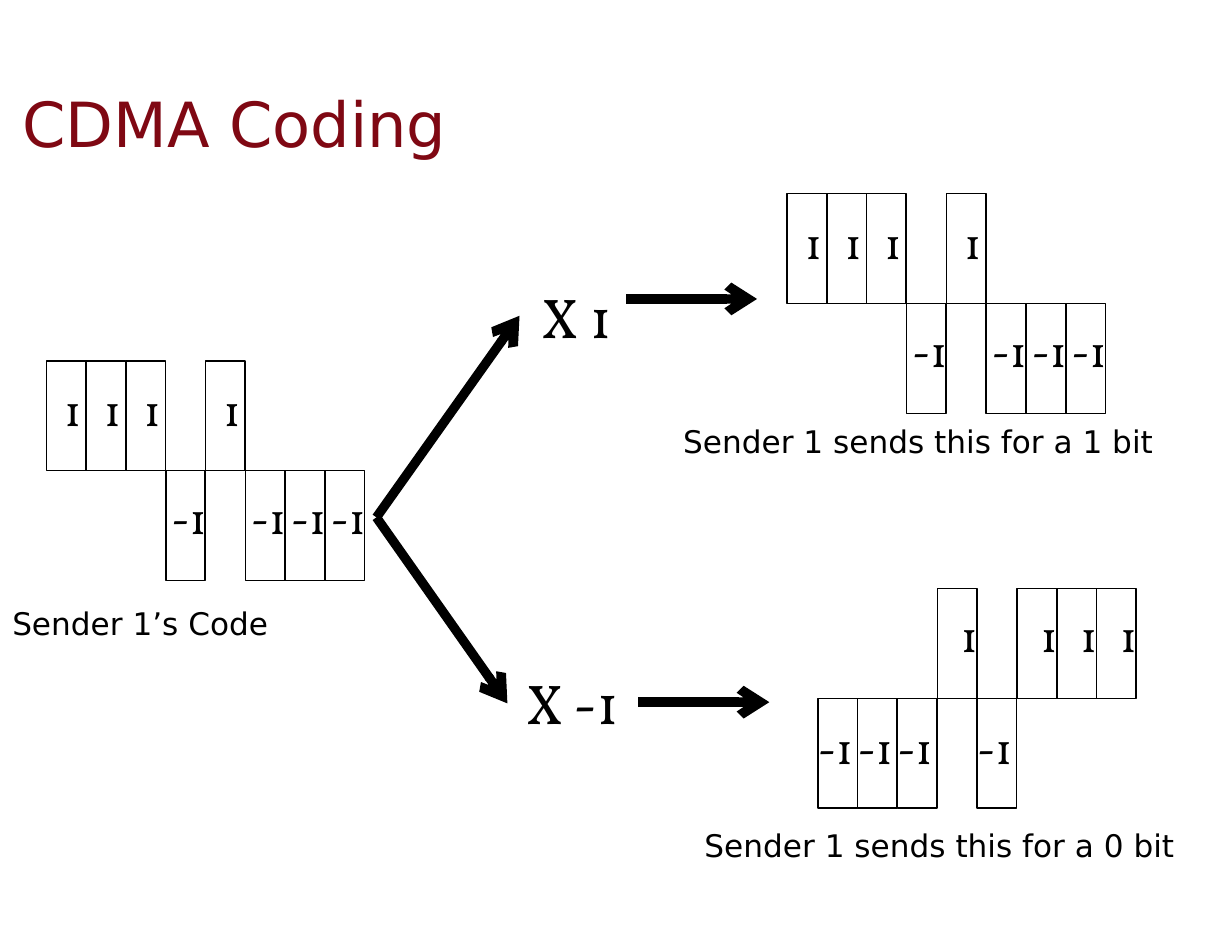
from pptx import Presentation
from pptx.dml.color import RGBColor
from pptx.enum.shapes import MSO_CONNECTOR, MSO_SHAPE
from pptx.enum.text import MSO_ANCHOR, MSO_AUTO_SIZE, PP_ALIGN
from pptx.oxml.ns import qn
from pptx.util import Pt
from lxml import etree

RECT, STRAIGHT = MSO_SHAPE.RECTANGLE, MSO_CONNECTOR.STRAIGHT
MIDDLE, TOP = MSO_ANCHOR.MIDDLE, MSO_ANCHOR.TOP
LEFT, RIGHT = PP_ALIGN.LEFT, PP_ALIGN.RIGHT
GROW, FIXED = MSO_AUTO_SIZE.SHAPE_TO_FIT_TEXT, MSO_AUTO_SIZE.NONE
SANS, SERIF = "DejaVu Sans", "Vollkorn"
COLORS = {"title": "7F0813", "ink": "000000"}
CODE = [1, 1, 1, -1, 1, -1, -1, -1]
PITCH, CHIP_W, CHIP_H = 25.6, 25.4, 70.6
LABEL_W = {1: 28.8, -1: 38.2}
CODE_OFFSETS = {1: (0.7, 10.8), -1: (-5, 9.7)}
INVERSE_OFFSETS = {1: (4.3, 9.7), -1: (-8.6, 10.8)}


def rgb(name):
    """Return the palette colour with this name."""
    return RGBColor.from_string(COLORS[name])


def write(tf, text, font, size, color="ink", align=LEFT):
    """Write one formatted run into a text frame."""
    p = tf.paragraphs[0]
    p.alignment = align
    r = p.add_run()
    r.text = text
    r.font.name, r.font.size = font, Pt(size)
    r.font.color.rgb = rgb(color)


def set_insets(tf):
    """Give a text frame the slide's wider insets."""
    tf.margin_left = tf.margin_right = Pt(7.9)
    tf.margin_top = tf.margin_bottom = Pt(4)


def add_title(s, text, box):
    """Fill and place the title placeholder."""
    sp = s.shapes.title
    sp.left, sp.top, sp.width, sp.height = map(Pt, box)
    tf = sp.text_frame
    tf.auto_size = FIXED
    tf.vertical_anchor = MIDDLE
    set_insets(tf)
    write(tf, text, SANS, 40, "title")


def add_caption(s, text, box):
    """Add a caption under a chip sequence."""
    tf = s.shapes.add_textbox(*map(Pt, box)).text_frame
    tf.word_wrap, tf.auto_size = True, GROW
    set_insets(tf)
    write(tf, text, SANS, 20)


def add_label(shapes, text, box, size):
    """Add a right-aligned number or factor on one line."""
    tf = shapes.add_textbox(*map(Pt, box)).text_frame
    tf.word_wrap, tf.auto_size = False, GROW
    tf.vertical_anchor = TOP
    write(tf, text, SERIF, size, align=RIGHT)


def add_sequence(s, chips, x, y, offsets):
    """Draw chips as a group, positive ones above the axis and negative below."""
    shapes = s.shapes.add_group_shape().shapes
    for i, chip in enumerate(chips):
        left = x + i * PITCH
        top = y if chip > 0 else y + CHIP_H
        sp = shapes.add_shape(RECT, Pt(left), Pt(top), Pt(CHIP_W), Pt(CHIP_H))
        sp.shadow.inherit = False
        sp.fill.background()
        sp.line.color.rgb = rgb("ink")
        sp.line.width = Pt(1)
        dx, dy = offsets[chip]
        add_label(shapes, str(chip), (left + dx, top + dy, LABEL_W[chip], 41), 28)


def add_arrow(s, start, end):
    """Draw a thick arrow between two points."""
    c = s.shapes.add_connector(STRAIGHT, *map(Pt, start + end))
    c.line.color.rgb = rgb("ink")
    c.line.width = Pt(6)
    etree.SubElement(c.line._get_or_add_ln(), qn("a:tailEnd"), type="arrow")
    etree.SubElement(c._element.spPr, qn("a:effectLst"))


def main():
    """Build the CDMA coding slide."""
    prs = Presentation()
    prs.slide_width, prs.slide_height = Pt(792), Pt(612)
    s = prs.slides.add_slide(prs.slide_layouts[5])
    add_title(s, "CDMA Coding", (6.5, 32.4, 673.2, 92.2))

    add_sequence(s, CODE, 29.8, 232, CODE_OFFSETS)
    add_caption(s, "Sender 1’s Code", (0, 384.5, 268.6, 32.4))
    add_sequence(s, CODE, 506, 124.5, CODE_OFFSETS)
    add_caption(s, "Sender 1 sends this for a 1 bit", (431.3, 267.8, 324, 32.4))
    add_sequence(s, [-chip for chip in CODE], 525.8, 378.4, INVERSE_OFFSETS)
    add_caption(s, "Sender 1 sends this for a 0 bit", (445, 527, 324, 32.4))

    add_label(s.shapes, "X 1", (334, 177.8, 66.2, 51), 36)
    add_label(s.shapes, "X -1", (326.2, 426.2, 78.5, 51), 36)
    fork = (242, 332.6)
    add_arrow(s, fork, (326.2, 452.2))
    add_arrow(s, fork, (334, 203))
    add_arrow(s, (402.5, 192.2), (486.7, 192.2))
    add_arrow(s, (410.4, 451.4), (494.6, 451.4))
    prs.save("out.pptx")


if __name__ == "__main__":
    main()
